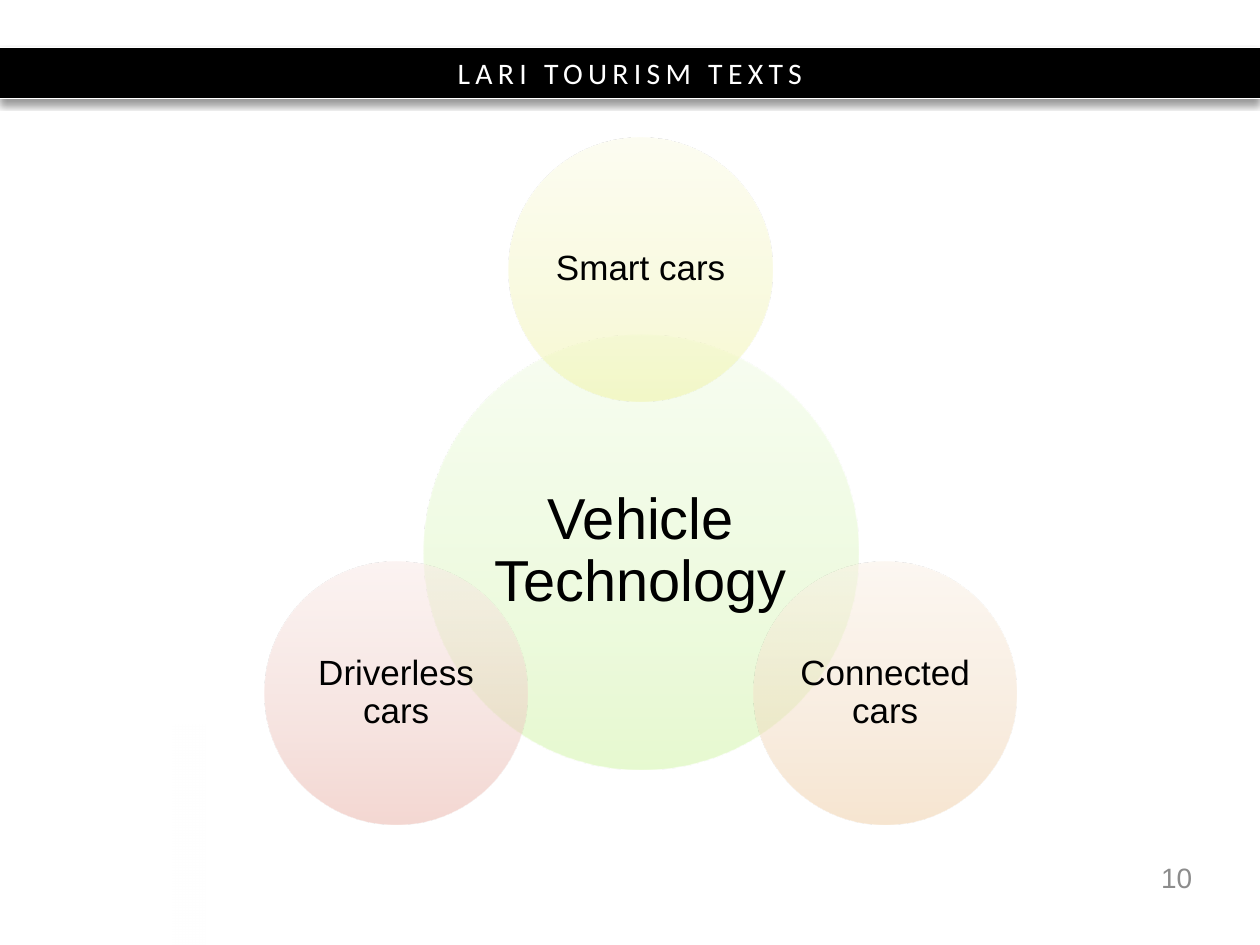
import math
from dataclasses import dataclass

import pptx
import pptx.dml.color
import pptx.enum.shapes
import pptx.enum.text
import pptx.oxml
import pptx.oxml.ns
import pptx.util

ALIGN = pptx.enum.text.PP_ALIGN
SHAPES = pptx.enum.shapes.MSO_SHAPE


@dataclass(frozen=True)
class Theme:
    heading_font: str = "Calibri"
    body_font: str = "Arial"
    black: str = "000000"
    white: str = "FFFFFF"
    grey: str = "8C8C8C"
    # Gradient colours from the bottom of a circle to its top
    green: tuple = ("D0F5A3", "DDF7BF", "F2FDE6")
    yellow: tuple = ("F1F4A2", "F4F6BF", "FCFCE6")
    orange: tuple = ("F0CDA3", "F3DBC0", "FBF1E6")
    red: tuple = ("EAB1A6", "EFC9C2", "FAEAE7")
    stops: tuple = (0, 35, 100)
    opacity: int = 50
    banner_size: float = 17
    hub_size: float = 33
    satellite_size: float = 20
    number_size: float = 16
    rule_width: float = 0.75


@dataclass(frozen=True)
class Box:
    left: float
    top: float
    width: float
    height: float

    def emu(self):
        return [pptx.util.Inches(n) for n in (self.left, self.top, self.width, self.height)]


THEME = Theme()
SLIDE = Box(0, 0, 10, 7.5)
COLUMNS, ROWS = 100, 75


def grid_box(column, row, columns, rows):
    across, down = SLIDE.width / COLUMNS, SLIDE.height / ROWS
    return Box(column * across, row * down, columns * across, rows * down)


def rgb(colour):
    return pptx.dml.color.RGBColor.from_string(colour)


def drawing_xml(body):
    return pptx.oxml.parse_xml(body.replace(">", f" {pptx.oxml.ns.nsdecls('a')}>", 1))


def add_gradient_shape(page, kind, box, stops, angle):
    """Each stop is a position, a colour and an opacity, in percent."""
    shape = page.shapes.add_shape(kind, *box.emu())
    shape.shadow.inherit = False
    shape.line.fill.background()
    stop_xml = "".join(
        f'<a:gs pos="{position * 1000}"><a:srgbClr val="{colour}">'
        f'<a:alpha val="{opacity * 1000}"/></a:srgbClr></a:gs>'
        for position, colour, opacity in stops)
    gradient = drawing_xml(f'<a:gradFill><a:gsLst>{stop_xml}</a:gsLst>'
                           f'<a:lin ang="{angle * 60000}" scaled="0"/></a:gradFill>')
    shape._element.spPr.find(pptx.oxml.ns.qn("a:prstGeom")).addnext(gradient)
    return shape


def write(shape, text, font, size, colour, align, inset=0.0):
    frame = shape.text_frame
    frame.text = text
    frame.word_wrap = True
    frame.vertical_anchor = pptx.enum.text.MSO_ANCHOR.MIDDLE
    frame.margin_left = frame.margin_right = pptx.util.Inches(inset)
    frame.margin_top = frame.margin_bottom = pptx.util.Inches(inset)
    para = frame.paragraphs[0]
    para.alignment = align
    span = para.runs[0]
    span.font.name = font
    span.font.size = pptx.util.Pt(size)
    span.font.color.rgb = rgb(colour)
    return para


def add_banner(page, box, title):
    # Black band with a soft shadow below it
    band = page.shapes.add_shape(SHAPES.RECTANGLE, *box.emu())
    band.fill.solid()
    band.fill.fore_color.rgb = rgb(THEME.black)
    band.line.fill.background()
    blur, distance = pptx.util.Pt(4), pptx.util.Pt(3)
    band._element.spPr.append(drawing_xml(
        f'<a:effectLst><a:outerShdw blurRad="{blur}" dist="{distance}" dir="5400000" '
        f'rotWithShape="0"><a:srgbClr val="{THEME.black}"><a:alpha val="40000"/>'
        '</a:srgbClr></a:outerShdw></a:effectLst>'))
    para = write(band, title, THEME.heading_font, THEME.banner_size, THEME.white, ALIGN.CENTER)
    para.runs[0].font._element.set("spc", "300")

    # White rules along both edges
    left, top, width, height = box.emu()
    for edge in (top, top + height):
        rule = page.shapes.add_connector(
            pptx.enum.shapes.MSO_CONNECTOR.STRAIGHT, left, edge, left + width, edge)
        rule.line.color.rgb = rgb(THEME.white)
        rule.line.width = pptx.util.Pt(THEME.rule_width)
        rule._element.spPr.append(drawing_xml("<a:effectLst></a:effectLst>"))


def add_fade(page, box):
    # Pale strip, clear on the left and white on the right
    stops = [(0, THEME.white, 0), (100, THEME.white, 100)]
    add_gradient_shape(page, SHAPES.RECTANGLE, box, stops, 0)


def add_circle(page, centre_x, centre_y, diameter, text, colours, size, inset):
    box = Box(centre_x - diameter / 2, centre_y - diameter / 2, diameter, diameter)
    stops = [(stop, colour, THEME.opacity) for stop, colour in zip(THEME.stops, colours)]
    circle = add_gradient_shape(page, SHAPES.OVAL, box, stops, 270)
    para = write(circle, text, THEME.body_font, size, THEME.black, ALIGN.CENTER, inset)
    para.line_spacing = 0.9


def add_radial_venn(page, box, hub, satellites):
    diameter = 0.35 * box.width
    hub_diameter = 1.65 * diameter
    orbit = 0.65 * hub_diameter
    centre_x = box.left + box.width / 2
    centre_y = box.top + diameter / 2 + orbit

    # Hub
    add_circle(page, centre_x, centre_y, hub_diameter, *hub, THEME.hub_size, 0.05)

    # Satellites, clockwise from the top
    for index, satellite in enumerate(satellites):
        angle = 2 * math.pi * index / len(satellites)
        add_circle(page, centre_x + orbit * math.sin(angle), centre_y - orbit * math.cos(angle),
                   diameter, *satellite, THEME.satellite_size, 0.03)


def add_page_number(page, box, number):
    label = page.shapes.add_textbox(*box.emu())
    write(label, number, THEME.body_font, THEME.number_size, THEME.grey, ALIGN.RIGHT, 0.1)


def main():
    deck = pptx.Presentation()
    deck.slide_width = pptx.util.Inches(SLIDE.width)
    deck.slide_height = pptx.util.Inches(SLIDE.height)
    page = deck.slides.add_slide(deck.slide_layouts[6])

    add_banner(page, grid_box(0, 3.75, COLUMNS, 4.05), "LARI TOURISM TEXTS")
    add_fade(page, grid_box(13.7, 57.5, 2.6, 17.5))
    add_page_number(page, grid_box(72.3, 67.6, 23.3, 4), "10")
    add_radial_venn(
        page, grid_box(21, 10.95, 59.7, 54.6),
        ("Vehicle Technology", THEME.green),
        [("Smart cars", THEME.yellow),
         ("Connected cars", THEME.orange),
         ("Driverless cars", THEME.red)])

    deck.save("out.pptx")


if __name__ == "__main__":
    main()
